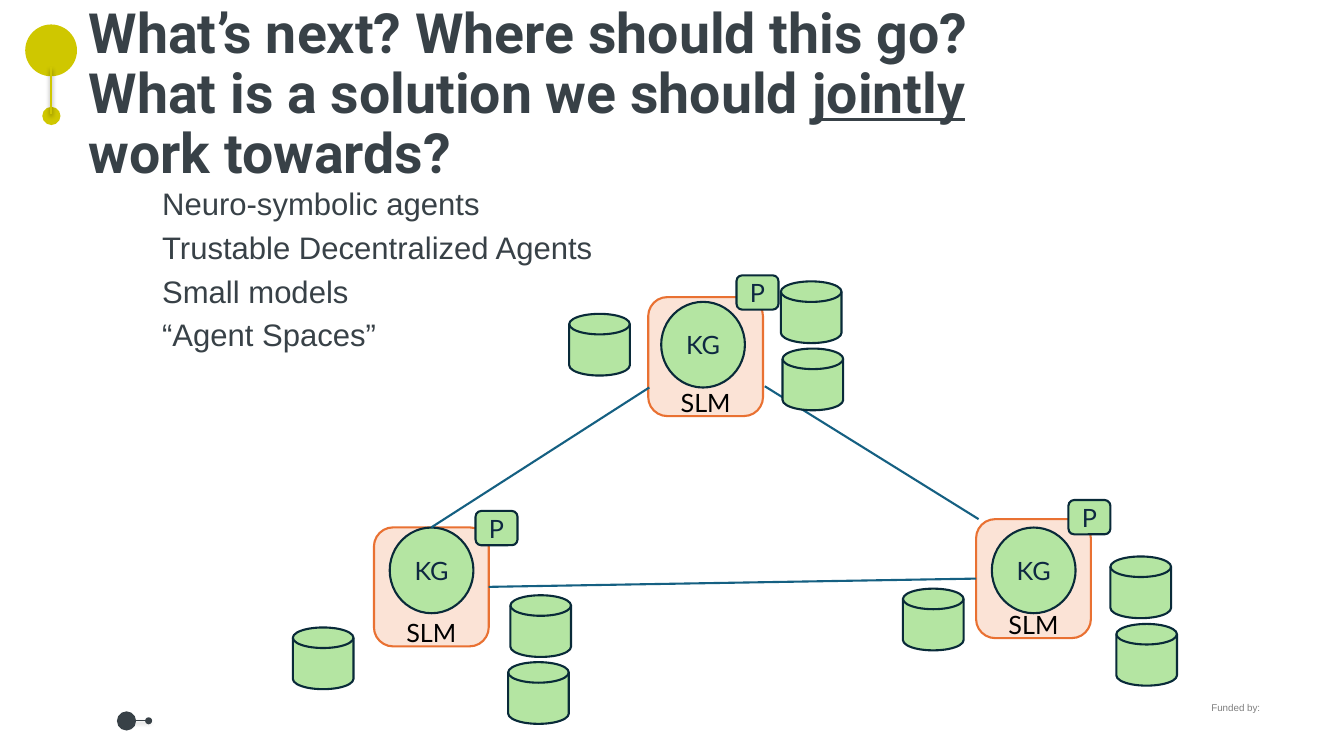
import pptx
import pptx.util
import pptx.dml.color
import pptx.enum.shapes
import pptx.enum.text
import pptx.oxml

Pt = pptx.util.Pt
Kind = pptx.enum.shapes.MSO_SHAPE
Anchor = pptx.enum.text.MSO_ANCHOR
Align = pptx.enum.text.PP_ALIGN
NS = 'xmlns:a="http://schemas.openxmlformats.org/drawingml/2006/main"'
GLOW = ('<a:outerShdw blurRad="39370" dist="20320" dir="5400000" rotWithShape="0">'
        '<a:srgbClr val="000000"><a:alpha val="38000"/></a:srgbClr></a:outerShdw>')


def color(code):
    return pptx.dml.color.RGBColor.from_string(code)


class Board:
    dark, lime, gray = "384147", "CFC700", "7F7F7F"
    peach, rust, green = "FBE3D6", "E97132", "B4E5A2"
    edge, navy, blue = "092A39", "0E2841", "156082"

    def __init__(self, slide):
        self.slide = slide

    def style(self, para, size, face, code, bold=False):
        for run in para.runs:
            run.font.size = Pt(size)
            run.font.name = face
            run.font.bold = bold
            run.font.color.rgb = color(code)

    def text(self, spot, size):
        box = self.slide.shapes.add_textbox(*map(Pt, spot + size))
        box.text_frame.word_wrap = True
        return box.text_frame

    def shape(self, kind, spot, size, fill, line=None):
        item = self.slide.shapes.add_shape(kind, *map(Pt, spot + size))
        item.shadow.inherit = False
        item.fill.solid()
        item.fill.fore_color.rgb = color(fill)
        if line:
            item.line.color.rgb = color(line)
            item.line.width = Pt(1.5)
        else:
            item.line.fill.background()
        return item

    def label(self, item, words, code, anchor=Anchor.MIDDLE, drop=0):
        frame = item.text_frame
        frame.margin_left = frame.margin_right = frame.margin_bottom = 0
        frame.margin_top = Pt(drop)
        frame.vertical_anchor = anchor
        frame.text = words
        para = frame.paragraphs[0]
        para.alignment = Align.CENTER
        self.style(para, 18, "Lato", code)

    def line(self, start, end, code, width=1.5, effect=""):
        link = self.slide.shapes.add_connector(
            pptx.enum.shapes.MSO_CONNECTOR.STRAIGHT, *map(Pt, start + end))
        link.line.color.rgb = color(code)
        link.line.width = Pt(width)
        link._element.spPr.append(pptx.oxml.parse_xml(
            f"<a:effectLst {NS}>{effect}</a:effectLst>"))
        return link

    def dot(self, spot, size, code):
        self.shape(Kind.OVAL, spot, (size, size), code)

    def model(self, spot):
        box = self.shape(Kind.ROUNDED_RECTANGLE, spot, (82, 85), self.peach, self.rust)
        self.label(box, "SLM", "000000", Anchor.TOP, 60.4)
        return box

    def graph(self, spot):
        ball = self.shape(Kind.OVAL, spot, (59.8, 61.2), self.green, self.edge)
        self.label(ball, "KG", self.navy)

    def disk(self, spot):
        self.shape(Kind.FLOWCHART_MAGNETIC_DISK, spot, (43.3, 44.1), self.green, self.edge)

    def badge(self, spot):
        tag = self.shape(Kind.ROUNDED_RECTANGLE, spot, (30, 24.5), self.green, self.edge)
        self.label(tag, "P", self.navy)

    def title(self):
        frame = self.text((56.2, 0.7), (707, 77.8))
        para = frame.paragraphs[0]
        para.text = "What’s next? Where should this go?\vWhat is a solution we should "
        for words in ("jointly", " work towards?"):
            run = para.add_run()
            run.text = words
            run.font.underline = words == "jointly"
        para.line_spacing = 0.9
        self.style(para, 39.6, "Roboto", self.dark, True)

    def points(self, lines):
        frame = self.text((90.7, 133.2), (779, 134))
        frame.text = "\n".join(lines)
        for rank, para in enumerate(frame.paragraphs):
            props = para._p.get_or_add_pPr()
            props.set("marL", str(Pt(36)))
            props.set("indent", str(Pt(-18)))
            para.line_spacing = 0.8
            para.space_before = Pt(10 if rank else 0)
            self.style(para, 22.2, "Arial", self.dark)

    def fund(self):
        frame = self.text((858.2, 497.5), (65.5, 15))
        frame.text = "Funded by:"
        self.style(frame.paragraphs[0], 7, "Arial", self.gray)


def main():
    deck = pptx.Presentation()
    deck.slide_width, deck.slide_height = Pt(960), Pt(540)
    board = Board(deck.slides.add_slide(deck.slide_layouts[6]))

    board.line((95, 514.8), (107.3, 514.8), board.dark, 0.75, GLOW)
    board.dot((103.7, 512.4), 5, board.dark)
    board.dot((83.5, 508.1), 13.7, board.dark)
    board.dot((30.2, 76.3), 13, board.lime)
    board.dot((18, 17.5), 37, board.lime)
    board.line((36.7, 48.2), (36.7, 81.4), board.lime, 1.5, GLOW)
    board.fund()
    board.title()
    board.points(["Neuro-symbolic agents", "Trustable Decentralized Agents",
                  "Small models", "“Agent Spaces”"])

    boxes = [(463, 212.2), (697.2, 370.8), (267.1, 376.7)]
    balls = [(472.3, 215.6), (708.5, 376.8), (278.4, 376.8)]
    badges = [(526.1, 196.7), (763.2, 357.2), (339.7, 365)]
    disks = [(406.6, 224.2), (559, 249), (557.8, 201),
             (645, 420.5), (797.4, 445.7), (793.2, 397.5),
             (209.2, 448.2), (363, 473), (364.6, 425.2)]

    top, right, left = [board.model(spot) for spot in boxes]
    for spot in balls:
        board.graph(spot)

    rise = board.line((308.1, 376.7), (463.8, 276.8), board.blue)
    rise.begin_connect(left, 0)
    base = board.line((697.2, 413.3), (349.1, 419.2), board.blue)
    base.begin_connect(right, 1)
    base.end_connect(left, 3)
    board.line((699, 370.8), (546.3, 275.9), board.blue)

    for spot in disks:
        board.disk(spot)
    for spot in badges:
        board.badge(spot)

    deck.save("out.pptx")


if __name__ == "__main__":
    main()
